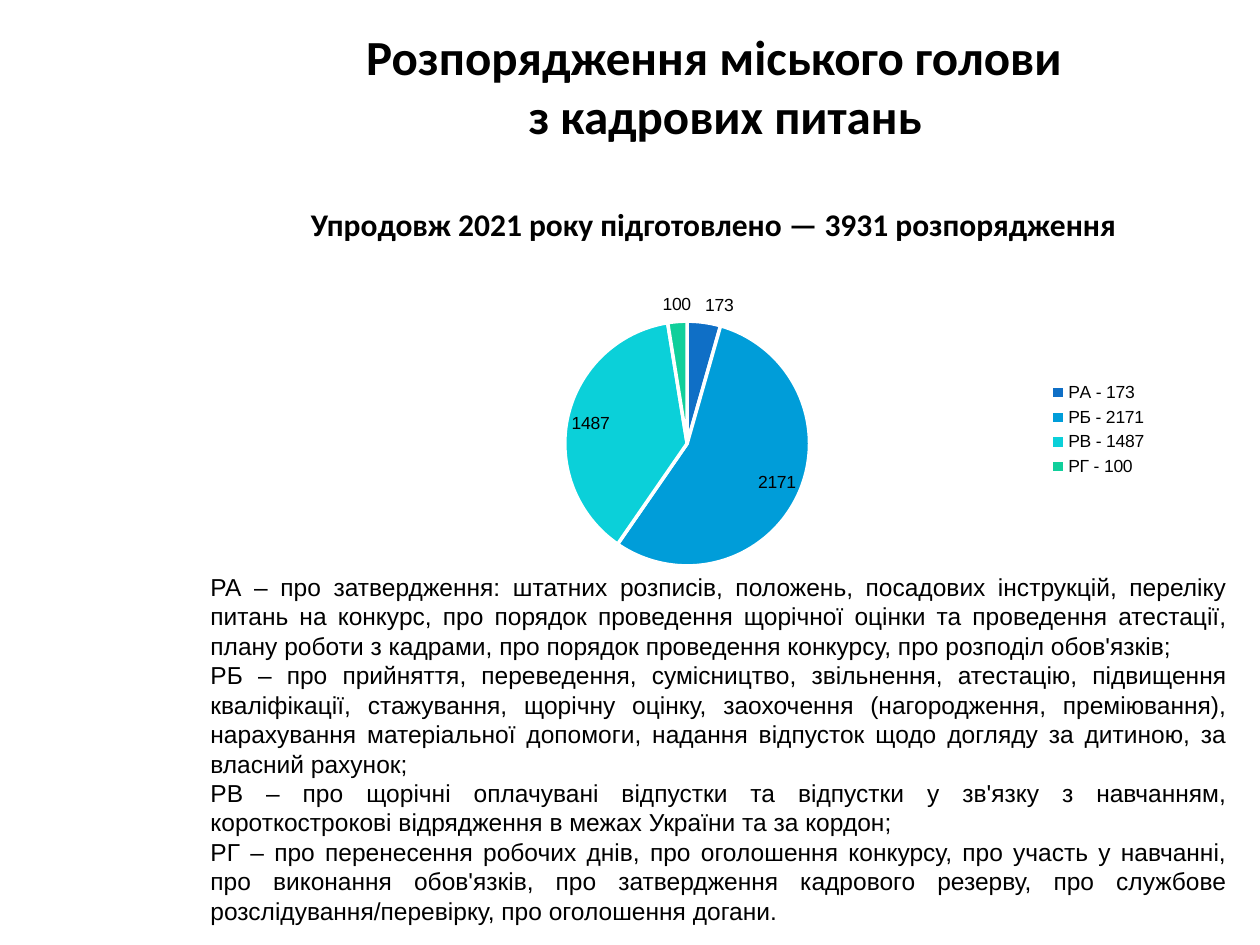
import pptx
import pptx.chart.data
import pptx.dml.color
import pptx.enum.chart
import pptx.enum.text
import pptx.oxml
import pptx.oxml.ns
import pptx.util

COLORS = {
    "text": "000000",
    "border": "FFFFFF",
    "РА": "0F6FC6",
    "РБ": "009DD9",
    "РВ": "0BD0D9",
    "РГ": "10CF9B",
}
ORDERS = {"РА": 173, "РБ": 2171, "РВ": 1487, "РГ": 100}
TITLE = ["Розпорядження міського голови", "з кадрових питань"]
SUBTITLE = ["Упродовж 2021 року підготовлено — 3931 розпорядження"]
DESCRIPTIONS = [
    "РА – про затвердження: штатних розписів, положень, посадових інструкцій, переліку питань на конкурс, про порядок проведення щорічної оцінки та проведення атестації, плану роботи з кадрами, про порядок проведення конкурсу, про розподіл обов'язків;",
    "РБ – про прийняття, переведення, сумісництво, звільнення, атестацію, підвищення кваліфікації, стажування, щорічну оцінку, заохочення (нагородження, преміювання), нарахування матеріальної допомоги, надання відпусток щодо догляду за дитиною, за власний рахунок;",
    "РВ – про щорічні оплачувані відпустки та відпустки у зв'язку з навчанням, короткострокові відрядження в межах України та за кордон;",
    "РГ – про перенесення робочих днів, про оголошення конкурсу, про участь у навчанні, про виконання обов'язків, про затвердження кадрового резерву, про службове розслідування/перевірку, про оголошення догани.",
]

deck = pptx.Presentation()
deck.slide_width = pptx.util.Inches(10)
deck.slide_height = pptx.util.Inches(7.5)
column = deck.slide_width / 100
row = deck.slide_height / 100
page = deck.slides.add_slide(deck.slide_layouts[1])


def grid(left, top, width, height):
    return [int(left * column), int(top * row), int(width * column), int(height * row)]


def write(box, area, lines, font, size, bold, align):
    box.left, box.top, box.width, box.height = grid(*area)
    frame = box.text_frame
    frame.word_wrap = True
    frame.auto_size = pptx.enum.text.MSO_AUTO_SIZE.NONE
    frame.vertical_anchor = pptx.enum.text.MSO_ANCHOR.TOP
    frame.text = "\n".join(lines)
    for para in frame.paragraphs:
        properties = para._p.get_or_add_pPr()
        properties.set("marL", "0")
        properties.set("indent", "0")
        properties.append(pptx.oxml.parse_xml(f'<a:buNone {pptx.oxml.ns.nsdecls("a")}/>'))
        para.alignment = align
        para.space_before = pptx.util.Pt(0)
        para.font.name = font
        para.font.size = pptx.util.Pt(size)
        para.font.bold = bold
        para.font.color.rgb = pptx.dml.color.RGBColor.from_string(COLORS["text"])


center = pptx.enum.text.PP_ALIGN.CENTER
justify = pptx.enum.text.PP_ALIGN.JUSTIFY
title = page.shapes.title
write(title, (17.3, 2.13, 78.7, 14.67), TITLE, "Calibri", 28, True, center)
title_indent = pptx.util.Inches(0.18)
title.text_frame.paragraphs[1]._p.pPr.set("marL", str(title_indent))

subtitle = page.shapes.add_textbox(0, 0, 0, 0)
write(subtitle, (17.3, 21.07, 78.7, 5.33), SUBTITLE, "Calibri", 18, True, center)
write(page.placeholders[1], (15.7, 59.87, 82.7, 38.53), DESCRIPTIONS, "Arial", 14, False, justify)

data = pptx.chart.data.CategoryChartData()
data.categories = [f"{code} - {count}" for code, count in ORDERS.items()]
data.add_series("Series 1", ORDERS.values())
pie = pptx.enum.chart.XL_CHART_TYPE.PIE
chart = page.shapes.add_chart(pie, *grid(26.2, 29.07, 65.9, 32.8), data).chart
chart.has_title = False
chart.font.name = "Arial"
chart.font.size = pptx.util.Pt(10)
chart.font.color.rgb = pptx.dml.color.RGBColor.from_string(COLORS["text"])
chart.has_legend = True
chart.legend.position = pptx.enum.chart.XL_LEGEND_POSITION.RIGHT
chart.legend.include_in_layout = False

plot = chart.plots[0]
plot.vary_by_categories = True
plot.has_data_labels = True
plot.data_labels.show_value = True
plot.data_labels.show_percentage = False
plot.data_labels.position = pptx.enum.chart.XL_LABEL_POSITION.BEST_FIT
for index, code in enumerate(ORDERS):
    wedge = plot.series[0].points[index].format
    wedge.fill.solid()
    wedge.fill.fore_color.rgb = pptx.dml.color.RGBColor.from_string(COLORS[code])
    wedge.line.color.rgb = pptx.dml.color.RGBColor.from_string(COLORS["border"])
    wedge.line.width = pptx.util.Pt(2)

plot_area = chart._chartSpace.chart.plotArea
for old_layout in plot_area.findall(pptx.oxml.ns.qn("c:layout")):
    plot_area.remove(old_layout)
layout = pptx.oxml.parse_xml(
    f'<c:layout {pptx.oxml.ns.nsdecls("c")}><c:manualLayout>'
    '<c:layoutTarget val="inner"/><c:xMode val="edge"/><c:yMode val="edge"/>'
    '<c:x val="0.28"/><c:y val="0.15"/><c:w val="0.3"/><c:h val="0.79"/>'
    "</c:manualLayout></c:layout>"
)
plot_area.insert(0, layout)

deck.save("out.pptx")
